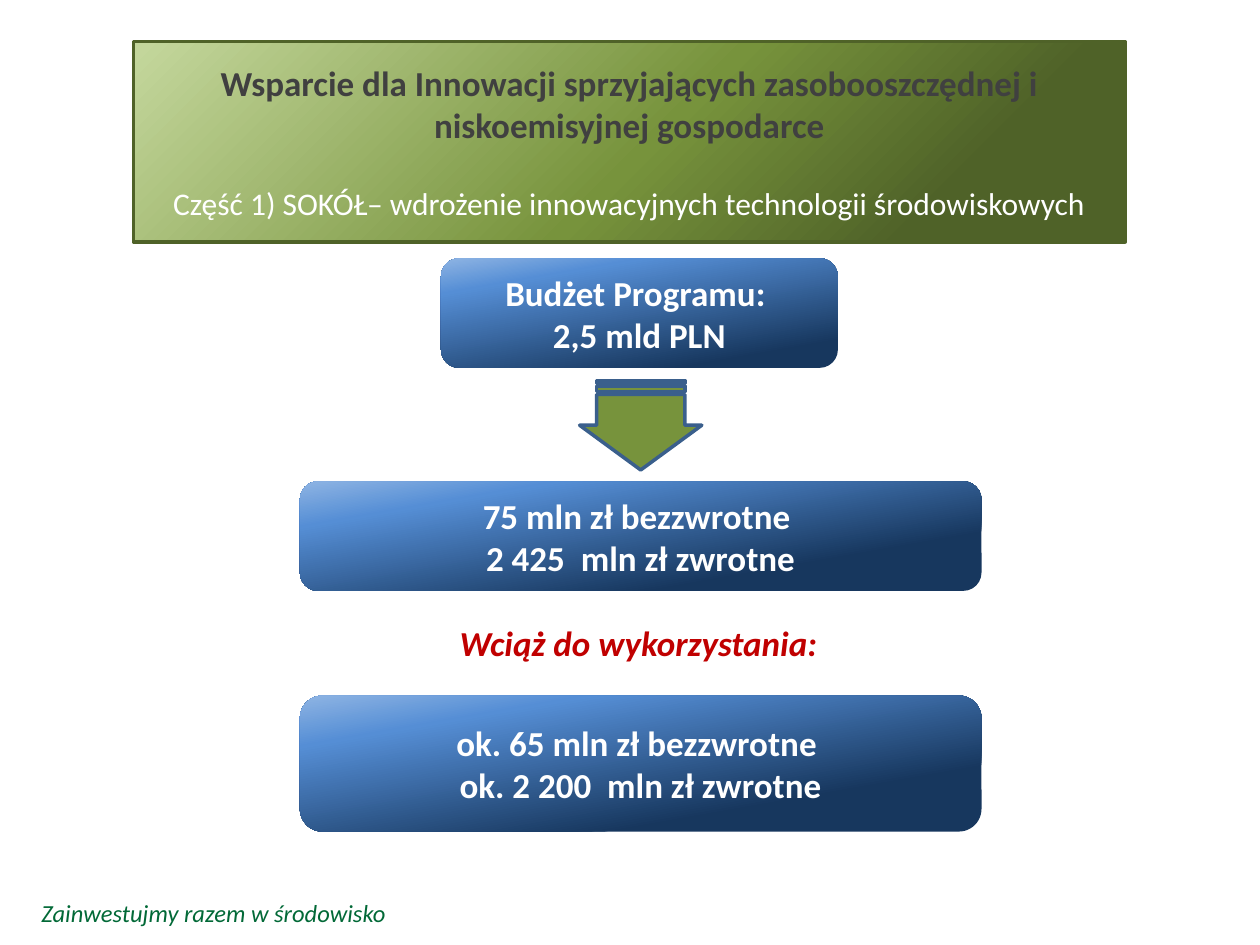
from copy import deepcopy

from lxml import etree
from pptx import Presentation
from pptx.dml.color import RGBColor
from pptx.enum.shapes import MSO_SHAPE
from pptx.enum.text import MSO_ANCHOR, MSO_AUTO_SIZE, PP_ALIGN
from pptx.oxml.ns import qn
from pptx.util import Inches, Pt

ROUNDED = MSO_SHAPE.ROUNDED_RECTANGLE
STRIPED_ARROW = MSO_SHAPE.STRIPED_RIGHT_ARROW
MIDDLE, CENTER = MSO_ANCHOR.MIDDLE, PP_ALIGN.CENTER
FONT = "Calibri"

COLORS = {
    "white": "FFFFFF", "heading": "404040", "red": "C00000", "motto": "026937",
    "dark green": "4F6228", "green": "77933C", "light green": "C3D69B",
    "navy": "17375E", "blue": "558ED5", "light blue": "8EB4E3", "arrow line": "3A5F8C",
}

HEADING = "Wsparcie dla Innowacji sprzyjających zasobooszczędnej i niskoemisyjnej gospodarce"
SUBHEADING = "Część 1) SOKÓŁ– wdrożenie innowacyjnych technologii środowiskowych"
HEADER_STOPS = [(0.19, "dark green"), (0.48, "green"), (0.99, "light green")]

# text, (left, top, width, height), position of the navy stop
PANELS = [
    ("Budżet Programu: \v2,5 mld PLN", (3.5, 2.05, 3.15, 0.87), 0.15),
    ("75 mln zł bezzwrotne \n2 425  mln zł zwrotne", (2.38, 3.82, 5.41, 0.87), 0.25),
    ("ok. 65 mln zł bezzwrotne \nok. 2 200  mln zł zwrotne", (2.38, 5.52, 5.41, 1.08), 0.25),
]

# text, (left, top, width, height), size, color, bold, wraps
LABELS = [
    ("Wciąż do wykorzystania:", (3.55, 4.88, 3.05, 0.44), 20, "red", True, False),
    ("Zainwestujmy razem w środowisko", (0.23, 7.08, 4.22, 0.34), 14, "motto", False, True),
]


def rgb(name):
    return RGBColor.from_string(COLORS[name])


def inches(lengths):
    return [Inches(length) for length in lengths]


def style(para, size, color, bold=False, italic=False):
    for span in para.runs:
        font = span.font
        font.name, font.size = FONT, Pt(size)
        font.bold, font.italic = bold, italic
        font.color.rgb = rgb(color)


def fill_gradient(shape, stops, angle):
    """Fill with three stops; the angle runs counter-clockwise."""
    shape.fill.gradient()
    shape.fill.gradient_angle = angle
    stop_list = shape._element.spPr.find(".//" + qn("a:gsLst"))
    stop_list.append(deepcopy(stop_list[-1]))
    for stop, (position, color) in zip(shape.fill.gradient_stops, stops):
        stop.position = position
        stop.color.rgb = rgb(color)


def set_outline(shape, color):
    shape.line.color.rgb = rgb(color)
    shape.line.width = Pt(2)


def format_header(title):
    title.left, title.top, title.width, title.height = inches((1.06, 0.33, 7.87, 1.59))
    geometry = etree.SubElement(title._element.spPr, qn("a:prstGeom"), prst="roundRect")
    etree.SubElement(geometry, qn("a:avLst"))
    fill_gradient(title, HEADER_STOPS, 135)
    set_outline(title, "dark green")
    frame = title.text_frame
    frame.text = HEADING + "\n" + SUBHEADING
    frame.auto_size = MSO_AUTO_SIZE.NONE
    frame.vertical_anchor = MIDDLE
    heading, subheading = frame.paragraphs
    heading.alignment = subheading.alignment = CENTER
    subheading.space_before = Pt(22)
    style(heading, 20, "heading", bold=True)
    style(subheading, 18, "white")


def add_panel(page, text, place, navy_position):
    panel = page.shapes.add_shape(ROUNDED, *inches(place))
    panel.shadow.inherit = False
    stops = [(navy_position, "navy"), (0.8, "blue"), (1, "light blue")]
    fill_gradient(panel, stops, 100)
    panel.line.fill.background()
    frame = panel.text_frame
    frame.text = text
    frame.vertical_anchor = MIDDLE
    for para in frame.paragraphs:
        para.alignment = CENTER
        style(para, 20, "white", bold=True)


def add_arrow(page):
    arrow = page.shapes.add_shape(STRIPED_ARROW, *inches((4.73, 2.89, 0.71, 0.97)))
    arrow.rotation = 90
    arrow.adjustments[0] = 0.72
    arrow.adjustments[1] = 0.5
    arrow.shadow.inherit = False
    arrow.fill.solid()
    arrow.fill.fore_color.rgb = rgb("green")
    set_outline(arrow, "arrow line")


def add_label(page, text, place, size, color, bold, wraps):
    frame = page.shapes.add_textbox(*inches(place)).text_frame
    frame.text = text
    frame.word_wrap = wraps
    style(frame.paragraphs[0], size, color, bold, italic=True)


def main():
    deck = Presentation()
    deck.slide_width, deck.slide_height = Inches(10), Inches(7.5)
    page = deck.slides.add_slide(deck.slide_layouts[5])
    format_header(page.shapes.title)
    for panel in PANELS:
        add_panel(page, *panel)
    add_arrow(page)
    for label in LABELS:
        add_label(page, *label)
    deck.save("out.pptx")


if __name__ == "__main__":
    main()
